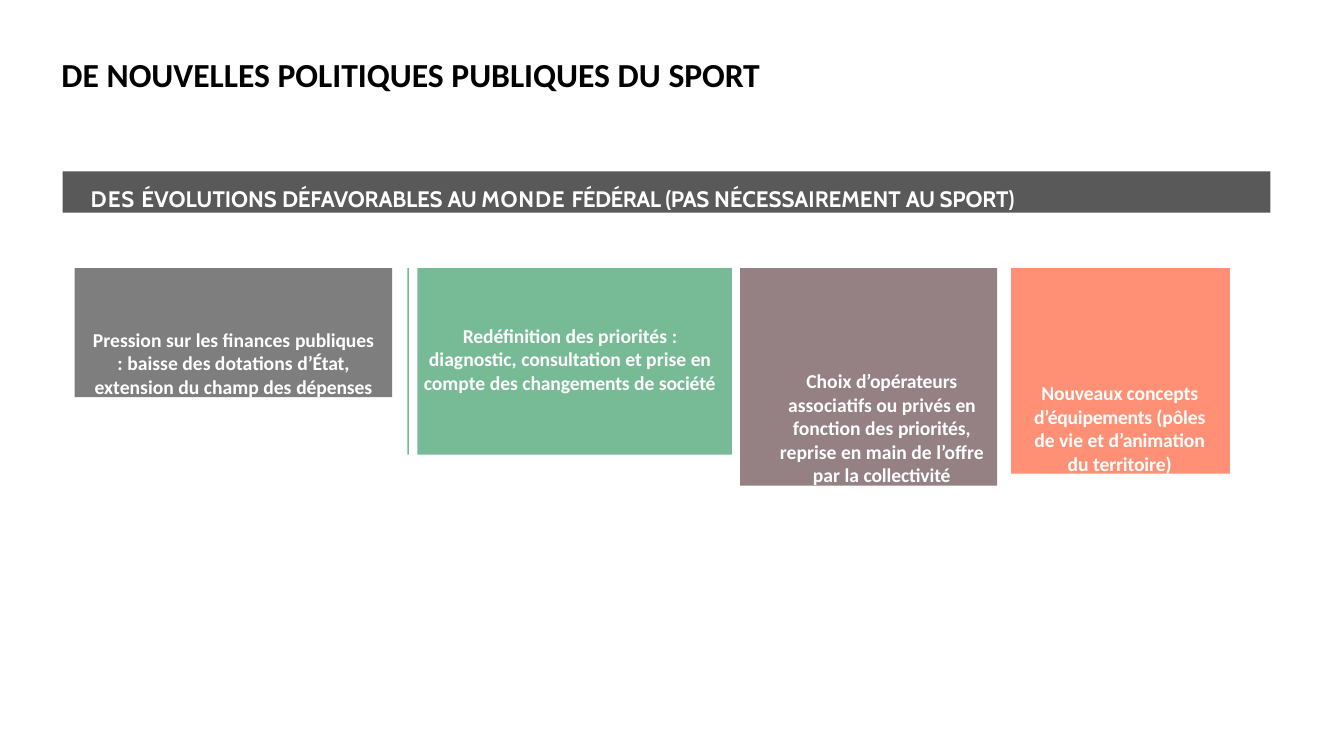
from lxml.etree import SubElement
from pptx import Presentation
from pptx.dml.color import RGBColor
from pptx.enum.shapes import MSO_CONNECTOR, MSO_SHAPE
from pptx.enum.text import MSO_ANCHOR, MSO_AUTO_SIZE, PP_ALIGN
from pptx.oxml.ns import qn
from pptx.util import Inches, Pt

COLORS = {
    "black": "000000",
    "white": "FFFFFF",
    "grey": "7E7E7E",
    "green": "77BB96",
    "mauve": "958083",
    "coral": "FF9076",
}


def add_block(left, top, width, height, color):
    block = slide.shapes.add_shape(
        MSO_SHAPE.RECTANGLE, Inches(left), Inches(top), Inches(width), Inches(height)
    )
    block.shadow.inherit = False
    block.fill.solid()
    block.fill.fore_color.rgb = RGBColor.from_string(COLORS[color])
    block.line.fill.background()
    return block


def write_text(shape, paragraphs, insets, font, size, color, align):
    frame = shape.text_frame
    frame.word_wrap = True
    frame.auto_size = MSO_AUTO_SIZE.NONE
    frame.vertical_anchor = MSO_ANCHOR.TOP
    frame.margin_left, frame.margin_top, frame.margin_right = map(Inches, insets)
    frame.margin_bottom = 0
    for index, runs in enumerate(paragraphs):
        paragraph = frame.add_paragraph() if index else frame.paragraphs[0]
        paragraph.alignment = align
        for text, spacing in runs:
            run = paragraph.add_run()
            run.text = text
            run.font.name = font
            run.font.size = Pt(size)
            run.font.bold = True
            run.font.color.rgb = RGBColor.from_string(COLORS[color])
            if spacing:
                run.font._element.set("spc", str(round(spacing * 100)))


prs = Presentation()
prs.slide_width = Inches(13.33)
prs.slide_height = Inches(7.5)
slide = prs.slides.add_slide(prs.slide_layouts[5])

title = slide.shapes.title
title.left, title.top = Inches(0.6), Inches(0.47)
title.width, title.height = Inches(10.11), Inches(1.32)
title_runs = [("DE NOUVELLES POLITIQUES PUBLIQUES DU ", 0), ("SPORT", -0.1)]
write_text(title, [title_runs], (0.01, 0.06, 0), "Calibri", 24, "black", PP_ALIGN.LEFT)

banner = add_block(0.62, 1.7, 11.98, 0.41, "black")
banner_color = banner.fill._xPr.find(qn("a:solidFill"))[0]
SubElement(banner_color, qn("a:alpha")).set("val", "65000")
banner_runs = [
    ("DES ", 0.7),
    ("ÉVOLUTIONS ", 0),
    ("DÉFAVORABLES ", -0.1),
    ("AU ", -0.3),
    ("MONDE ", 0.6),
    ("FÉDÉRAL (PAS ", -0.3),
    ("NÉCESSAIREMENT ", 0),
    ("AU ", -0.3),
    ("SPORT)", -0.1),
]
write_text(banner, [banner_runs], (0.28, 0.14, 0), "Cabin", 16, "white", PP_ALIGN.LEFT)

CARD_TOP = 2.66
add_block(4.04, CARD_TOP, 0.02, 1.85, "green")
separator = slide.shapes.add_connector(
    MSO_CONNECTOR.STRAIGHT, Inches(4.1), Inches(2.3), Inches(4.1), Inches(4.64)
)
separator.line.color.rgb = RGBColor.from_string(COLORS["white"])
separator.line.width = Pt(6)
SubElement(separator._element.spPr, qn("a:effectLst"))

cards = [
    (0.74, 3.15, 1.28, "grey", (0, 0.59, 0), [
        [("Pression sur les finances ", 0), ("publiques", -0.1)],
        [(": baisse des dotations ", 0), ("d’État,", -0.1)],
        [("extension du champ des ", 0), ("dépenses", -0.1)],
    ]),
    (4.14, 3.12, 1.85, "green", (0.05, 0.55, 0.15), [
        [
            ("Redéfinition ", -0.1),
            ("des priorités ", 0),
            (": ", -0.5),
            ("diagnostic, ", 0),
            ("consultation ", -0.1),
            ("et prise ", 0),
            ("en ", -0.3),
            ("compte des", 0),
            (" changements ", -0.1),
            ("de", 0),
            (" société", -0.1),
        ],
    ]),
    (7.34, 2.55, 2.16, "mauve", (0.26, 1, 0), [
        [
            ("Choix ", 0),
            ("d’opérateurs ", -0.1),
            ("associatifs ou privés ", 0),
            ("en ", -0.3),
            ("fonction des ", 0),
            ("priorités, ", -0.1),
            ("reprise en main de ", 0),
            ("l’offre ", -0.1),
            ("par la ", 0),
            ("collectivité", -0.1),
        ],
    ]),
    (10.03, 2.17, 2.04, "coral", (0.18, 1.12, 0.2), [
        [
            ("Nouveaux concepts ", -0.1),
            ("d’équipements ", -0.2),
            ("(pôles ", -0.1),
            ("de vie et ", 0),
            ("d’animation", -0.1),
        ],
        [("du ", 0), ("territoire)", -0.1)],
    ]),
]
for left, width, height, color, insets, paragraphs in cards:
    card = add_block(left, CARD_TOP, width, height, color)
    write_text(card, paragraphs, insets, "Calibri", 14, "white", PP_ALIGN.CENTER)

prs.save("out.pptx")
